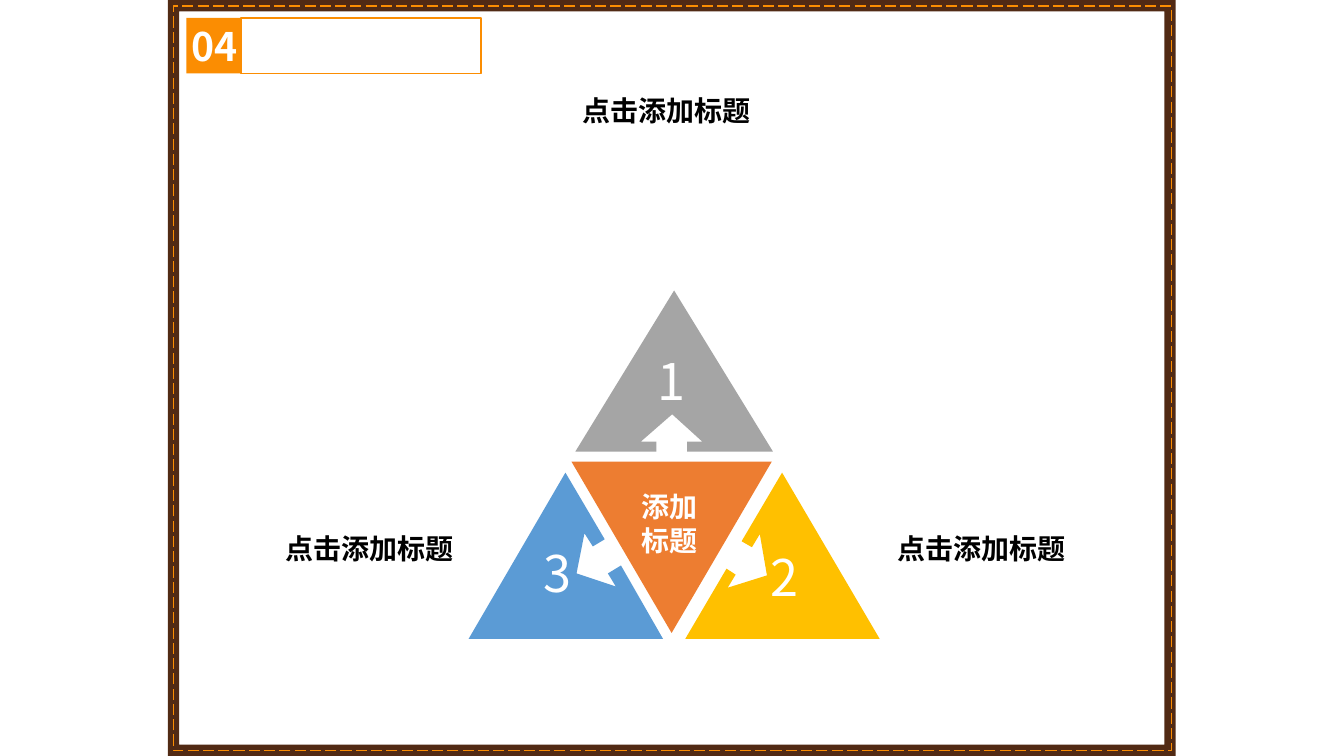
import pptx
import pptx.dml.color
import pptx.enum.dml
import pptx.enum.shapes
import pptx.enum.text
import pptx.util
from dataclasses import dataclass
from lxml import etree

Cm = pptx.util.Cm
SHAPES = pptx.enum.shapes.MSO_SHAPE
ALIGN = pptx.enum.text.PP_ALIGN


@dataclass(frozen=True)
class Theme:
    font: str = "Noto Sans CJK SC"
    brown: str = "512A14"
    accent: str = "FB8D02"
    gray: str = "A5A5A5"
    gold: str = "FFC000"
    orange: str = "ED7D31"
    blue: str = "5B9BD5"
    white: str = "FFFFFF"
    black: str = "000000"
    section_size: int = 28
    title_size: int = 20
    number_size: int = 36


theme = Theme()
rgb = pptx.dml.color.RGBColor.from_string


def paint(shape, fill=None, line=None):
    shape.shadow.inherit = False
    if fill:
        shape.fill.solid()
        shape.fill.fore_color.rgb = rgb(fill)
    else:
        shape.fill.background()
    if line:
        shape.line.color.rgb = rgb(line)
        shape.line.width = pptx.util.Pt(1)
    else:
        shape.line.fill.background()


def write(shape, text, size, color, bold=True, align=ALIGN.CENTER, wrap=True, grow=True):
    frame = shape.text_frame
    frame.word_wrap = wrap
    if grow:
        frame.auto_size = pptx.enum.text.MSO_AUTO_SIZE.SHAPE_TO_FIT_TEXT
    paragraph = frame.paragraphs[0]
    paragraph.text = text
    paragraph.alignment = align
    font = paragraph.font
    font.name = theme.font
    font.size = pptx.util.Pt(size)
    font.bold = bold
    font.color.rgb = rgb(color)
    # Chinese characters take their typeface from a:ea, which follows a:latin
    latin = paragraph._p.find(".//" + pptx.oxml.ns.qn("a:latin"))
    east_asian = etree.Element(pptx.oxml.ns.qn("a:ea"), typeface=theme.font)
    latin.addnext(east_asian)


deck = pptx.Presentation()
deck.slide_width, deck.slide_height = Cm(33.87), Cm(19.05)
slide = deck.slides.add_slide(deck.slide_layouts[6])
shapes = slide.shapes

# Border with dashed stitching
border = shapes.add_shape(SHAPES.FRAME, Cm(4.23), 0, Cm(25.4), Cm(19.05))
border.adjustments[0] = 0.015
paint(border, theme.brown)
stitching = shapes.add_shape(SHAPES.RECTANGLE, Cm(4.37), Cm(0.15), Cm(25.15), Cm(18.77))
paint(stitching, line=theme.accent)
stitching.line.dash_style = pptx.enum.dml.MSO_LINE.LONG_DASH

# Section number and empty heading box
section = shapes.add_shape(SHAPES.RECTANGLE, Cm(4.7), Cm(0.45), Cm(1.4), Cm(1.4))
paint(section, theme.accent)
section_text = section.text_frame
section_text.margin_left = section_text.margin_right = 0
section_text.margin_top = section_text.margin_bottom = 0
section_text.vertical_anchor = pptx.enum.text.MSO_ANCHOR.MIDDLE
write(section, "04", theme.section_size, theme.white, grow=False)
heading = shapes.add_shape(SHAPES.RECTANGLE, Cm(6.07), Cm(0.45), Cm(6.05), Cm(1.4))
paint(heading, line=theme.accent)

# Outer triangles, each with an arrow cut out of its inner side
triangles = [
    (theme.gray, [(16.99, 7.32), (19.48, 11.38), (17.32, 11.38), (17.32, 11.13),
                  (17.7, 11.13), (16.94, 10.44), (16.15, 11.13), (16.54, 11.13),
                  (16.54, 11.38), (14.5, 11.38)]),
    (theme.gold, [(19.71, 11.91), (22.17, 16.1), (17.27, 16.1), (18.31, 14.33),
                  (18.54, 14.48), (18.34, 14.81), (19.33, 14.5), (19.15, 13.46),
                  (18.95, 13.79), (18.69, 13.64)]),
    (theme.blue, [(14.25, 11.91), (15.24, 13.59), (14.94, 13.77), (14.73, 13.44),
                  (14.53, 14.45), (15.52, 14.78), (15.32, 14.45), (15.65, 14.25),
                  (16.71, 16.1), (11.81, 16.1)]),
]
for color, corners in triangles:
    first, *others = [(Cm(x), Cm(y)) for x, y in corners]
    outline = shapes.build_freeform(*first)
    outline.add_line_segments(others, close=True)
    paint(outline.convert_to_shape(), color)

# Central triangle and its label
center = shapes.add_shape(SHAPES.ISOSCELES_TRIANGLE, Cm(14.4), Cm(11.63), Cm(5.05), Cm(4.32))
center.rotation = 180
paint(center, theme.orange)
center_label = shapes.add_textbox(Cm(15.9), Cm(12.22), Cm(1.96), Cm(1.96))
write(center_label, "添加标题", theme.title_size, theme.white)

# Titles around the diagram
for left, top in [(14.35, 2.24), (22.29, 13.26), (6.88, 13.26)]:
    title = shapes.add_textbox(Cm(left), Cm(top), Cm(4.88), Cm(1.12))
    write(title, "点击添加标题", theme.title_size, theme.black)

# Triangle numbers
for number, (left, top) in enumerate([(16.33, 8.69), (19.18, 13.64), (13.46, 13.54)], 1):
    label = shapes.add_textbox(Cm(left), Cm(top), Cm(1.27), Cm(1.8))
    write(label, str(number), theme.number_size, theme.white,
          bold=False, align=ALIGN.LEFT, wrap=False)

deck.save("out.pptx")
